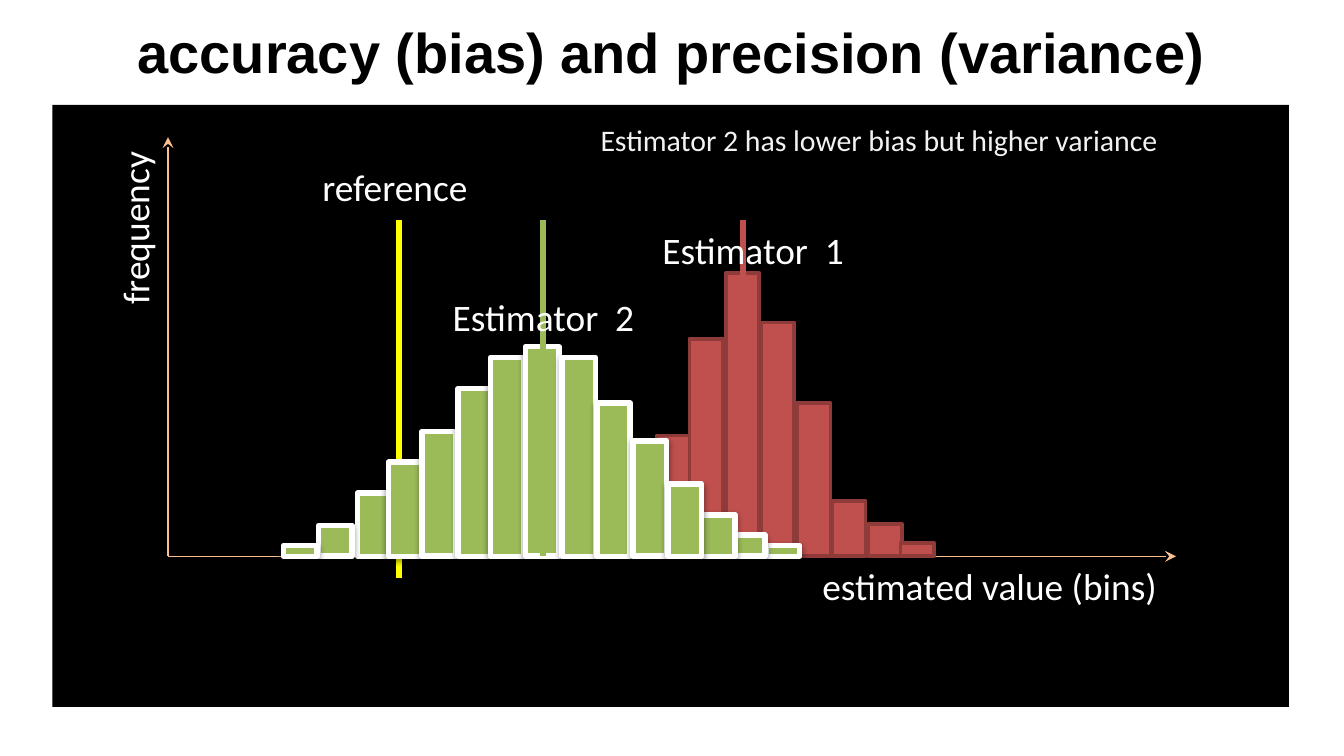
from pptx import Presentation
from pptx.dml.color import RGBColor
from pptx.enum.shapes import MSO_CONNECTOR, MSO_SHAPE
from pptx.enum.text import MSO_ANCHOR, MSO_AUTO_SIZE, PP_ALIGN
from pptx.oxml import parse_xml
from pptx.oxml.ns import nsdecls
from pptx.util import Inches, Pt

RECTANGLE = MSO_SHAPE.RECTANGLE
STRAIGHT = MSO_CONNECTOR.STRAIGHT
MIDDLE = MSO_ANCHOR.MIDDLE
CENTER = PP_ALIGN.CENTER
GROW = MSO_AUTO_SIZE.SHAPE_TO_FIT_TEXT
NO_FIT = MSO_AUTO_SIZE.NONE

THEME = {
    "title": {"name": "Arial", "size": Pt(30), "bold": True, "color": "000000"},
    "label": {"name": "Calibri", "size": Pt(20), "color": "FFFFFF"},
    "remark": {"name": "Calibri", "size": Pt(16), "color": "F2F2F2"},
    "panel": "000000",
    "axis": "FAC090",
    "reference": "FFFF00",
    "estimator_1": {"fill": "C0504D", "line": "8E3B39", "weight": 2},
    "estimator_2": {"fill": "9BBB59", "line": "FFFFFF", "weight": 3},
}
SHADOW = (
    f'<a:effectLst {nsdecls("a")}><a:outerShdw blurRad="40000" dist="20000" '
    'dir="5400000" rotWithShape="0"><a:srgbClr val="000000">'
    '<a:alpha val="38000"/></a:srgbClr></a:outerShdw></a:effectLst>'
)

presentation = Presentation()
presentation.slide_width = Inches(10)
presentation.slide_height = Inches(5.625)
slide = presentation.slides.add_slide(presentation.slide_layouts[5])

cell = presentation.slide_width / 100
baseline = 41.4
bar_width = 2.5
line_top = 16.4


def add_line(start, end, color, weight, arrow=False):
    points = [int(value * cell) for value in (*start, *end)]
    connector = slide.shapes.add_connector(STRAIGHT, *points)
    connector.line.color.rgb = RGBColor.from_string(color)
    connector.line.width = Pt(weight)
    if arrow:
        connector.line._get_or_add_ln().append(
            parse_xml(f'<a:tailEnd {nsdecls("a")} type="stealth"/>'))
    connector._element.spPr.append(parse_xml(f'<a:effectLst {nsdecls("a")}/>'))


def write(shape, text, style):
    paragraph = shape.text_frame.paragraphs[0]
    paragraph.text = text
    font = paragraph.runs[0].font
    for key, value in THEME[style].items():
        if key == "color":
            font.color.rgb = RGBColor.from_string(value)
        else:
            setattr(font, key, value)
    return paragraph


title = slide.shapes.title
title_format = {"left": 7.8, "top": 0.4, "width": 84.3, "height": 6.8}
for key, value in title_format.items():
    setattr(title, key, int(value * cell))
frame_format = {
    "vertical_anchor": MIDDLE, "word_wrap": True, "auto_size": NO_FIT,
    "margin_left": Inches(0.09), "margin_right": Inches(0.09),
    "margin_top": Inches(0.04), "margin_bottom": Inches(0.04),
}
for key, value in frame_format.items():
    setattr(title.text_frame, key, value)
write(title, "accuracy (bias) and precision (variance)", "title").alignment = CENTER

panel = slide.shapes.add_shape(
    RECTANGLE, *[int(value * cell) for value in (3.9, 7.8, 92, 44.8)])
panel.fill.solid()
panel.fill.fore_color.rgb = RGBColor.from_string(THEME["panel"])
panel.line.fill.background()
panel.shadow.inherit = False

origin = (12.5, baseline)
for axis_end in [(12.5, 10.2), (87.5, baseline)]:
    add_line(origin, axis_end, THEME["axis"], 0.75, arrow=True)

histograms = {
    "estimator_1": [
        (46.3, 2.9), (48.9, 9), (51.3, 16.2), (54, 21.1), (56.6, 17.4),
        (59.3, 11.4), (61.9, 4.1), (64.6, 2.4), (67, 1), (43.7, 1),
    ],
    "estimator_2": [
        (26.6, 4.7), (23.7, 2.3), (21.1, 0.8), (57, 0.8), (54.4, 1.6),
        (28.9, 7), (31.4, 9.3), (34.1, 12.5), (36.5, 14.8), (39.1, 15.6),
        (41.8, 14.8), (44.4, 11.4), (47.1, 8.6), (52.2, 3.1), (49.7, 5.4),
    ],
}
means = {"estimator_1": 55.3, "estimator_2": 40.4}

add_line((29.7, line_top), (29.7, 43), THEME["reference"], 3)
for estimator, bars in histograms.items():
    colors = THEME[estimator]
    group = slide.shapes.add_group_shape()
    for left, height in bars:
        box = (left, baseline - height, bar_width, height)
        bar = group.shapes.add_shape(RECTANGLE, *[int(value * cell) for value in box])
        bar.fill.solid()
        bar.fill.fore_color.rgb = RGBColor.from_string(colors["fill"])
        bar.line.color.rgb = RGBColor.from_string(colors["line"])
        bar.line.width = Pt(colors["weight"])
        if estimator == "estimator_2":
            bar._element.spPr.append(parse_xml(SHADOW))
        else:
            bar.shadow.inherit = False
    mean = means[estimator]
    add_line((mean, line_top), (mean, baseline), colors["fill"], 3)

labels = [
    ("estimated value (bins)", (60.2, 41.4, 27.2, 4.4), "label", 0),
    ("frequency", (3.3, 14.7, 13.5, 4.4), "label", 270),
    ("reference", (23, 11.7, 12.9, 4.4), "label", 0),
    ("Estimator  2", (32.7, 21.4, 15.8, 4.4), "label", 0),
    ("Estimator  1", (48.3, 16.4, 15.8, 4.4), "label", 0),
    ("Estimator 2 has lower bias but higher variance", (43.7, 8.6, 44, 3.7), "remark", 0),
]
for text, box, style, rotation in labels:
    label = slide.shapes.add_textbox(*[int(value * cell) for value in box])
    label.rotation = rotation
    label.text_frame.word_wrap = False
    label.text_frame.auto_size = GROW
    write(label, text, style)

presentation.save("out.pptx")
